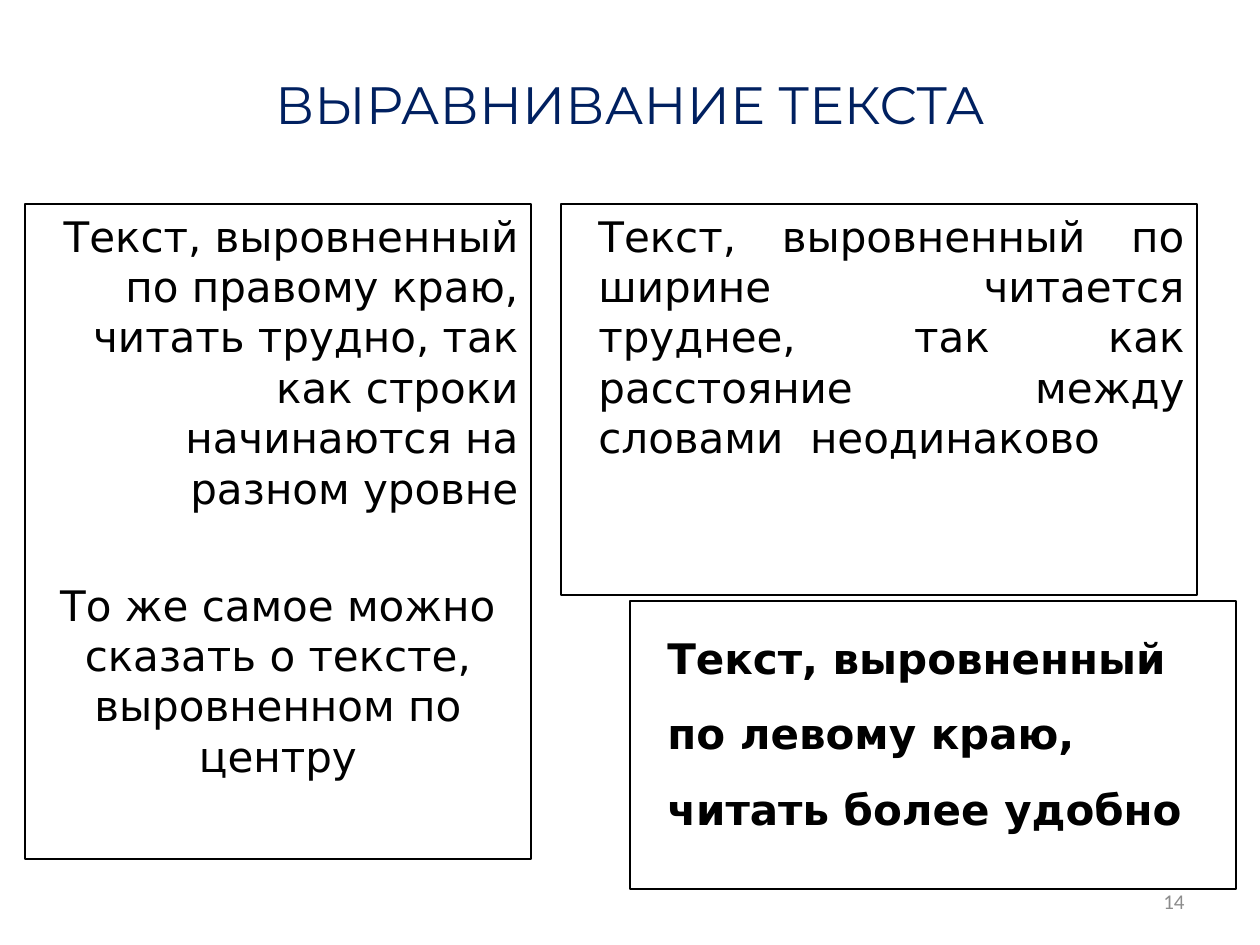
from pptx import Presentation
from pptx.dml.color import RGBColor
from pptx.enum.shapes import MSO_SHAPE
from pptx.enum.text import MSO_ANCHOR, PP_ALIGN
from pptx.util import Pt

PX = 914400 // 126
COLORS = {"title": "002060", "text": "000000", "number": "8C8C8C"}


def add_paragraph(p, text, align, color, **font):
    p.alignment = align
    r = p.add_run()
    r.text = text
    r.font.color.rgb = RGBColor.from_string(COLORS[color])
    for name, value in font.items():
        setattr(r.font, name, value)


prs = Presentation()
prs.slide_width, prs.slide_height = 1260 * PX, 945 * PX
slide = prs.slides.add_slide(prs.slide_layouts[6])

# Title and slide number
labels = [
    ((63, 38, 1134, 130), "ВЫРАВНИВАНИЕ ТЕКСТА", PP_ALIGN.CENTER, "title", "Montserrat", 30),
    ((903, 876, 294, 50), "14", PP_ALIGN.RIGHT, "number", "Calibri", 12),
]
for box, text, align, color, font, size in labels:
    tf = slide.shapes.add_textbox(*(v * PX for v in box)).text_frame
    tf.word_wrap = True
    tf.vertical_anchor = MSO_ANCHOR.MIDDLE
    add_paragraph(tf.paragraphs[0], text, align, color, name=font, size=Pt(size))

# Framed samples: box, left indent in px, bold, line spacing, paragraphs
samples = [
    ((630, 601, 606, 288), 25, True, 1.5, [
        ("Текст, выровненный по левому краю, читать более удобно", PP_ALIGN.LEFT),
    ]),
    ((561, 204, 636, 391), 25, False, 1.0, [
        ("Текст, выровненный по ширине читается труднее, так как расстояние "
         "между словами  неодинаково", PP_ALIGN.JUSTIFY),
    ]),
    ((25, 204, 506, 655), 0, False, 1.0, [
        ("Текст, выровненный по правому краю, читать трудно, так как строки "
         "начинаются на разном уровне", PP_ALIGN.RIGHT),
        ("То же самое можно сказать о тексте, выровненном по центру", PP_ALIGN.CENTER),
    ]),
]
for box, indent, bold, spacing, paragraphs in samples:
    sp = slide.shapes.add_shape(MSO_SHAPE.RECTANGLE, *(v * PX for v in box))
    sp.shadow.inherit = False
    sp.fill.background()
    sp.line.color.rgb = RGBColor.from_string(COLORS["text"])
    sp.line.width = Pt(0.75)
    tf = sp.text_frame
    tf.word_wrap = True
    tf.vertical_anchor = MSO_ANCHOR.TOP
    for i, (text, align) in enumerate(paragraphs):
        p = tf.add_paragraph() if i else tf.paragraphs[0]
        p.line_spacing = spacing
        if i:
            p.space_before = Pt(38)
        if indent:
            p._p.get_or_add_pPr().set("marL", str(indent * PX))
        add_paragraph(p, text, align, "text", name="DejaVu Sans", size=Pt(24), bold=bold)

prs.save("out.pptx")
